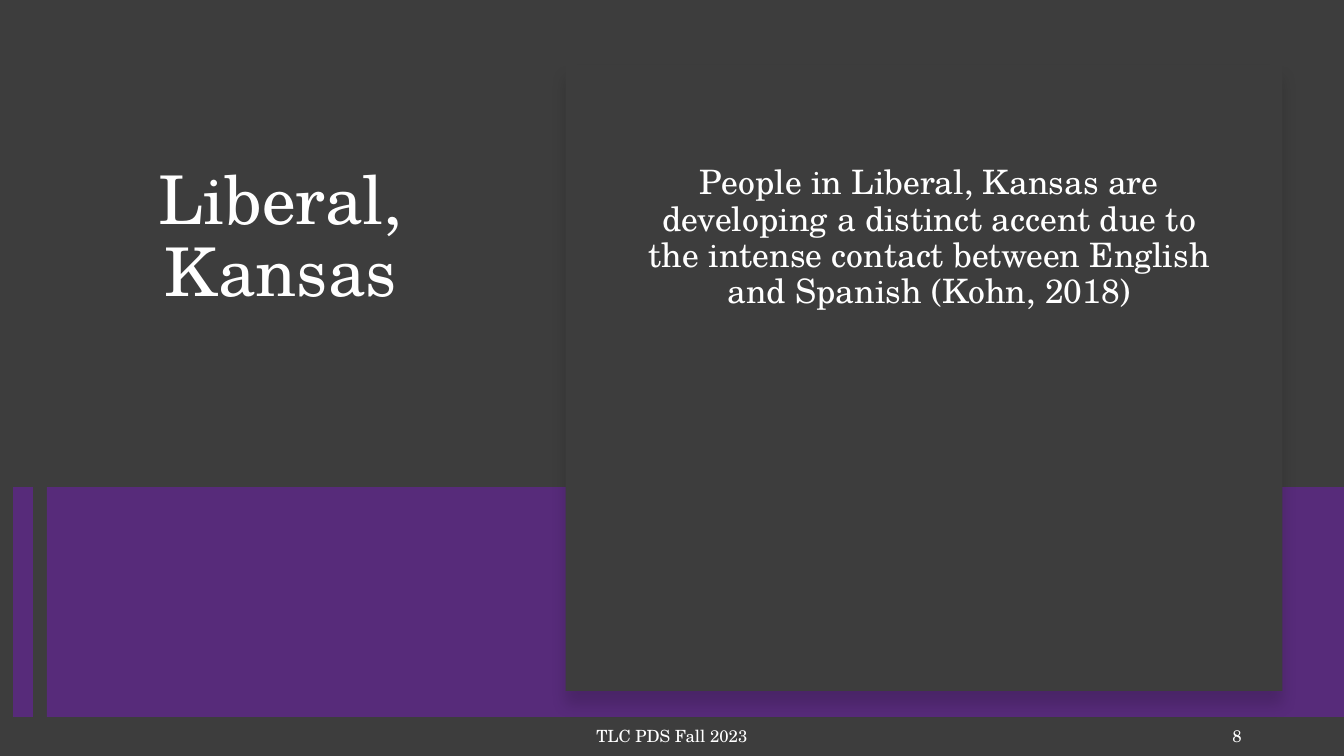
from dataclasses import dataclass

import pptx
import pptx.dml.color
import pptx.enum.shapes
import pptx.enum.text
import pptx.oxml
import pptx.oxml.ns
import pptx.shapes.autoshape
import pptx.slide
import pptx.util

Pt = pptx.util.Pt
ALIGN = pptx.enum.text.PP_ALIGN
ANCHOR = pptx.enum.text.MSO_ANCHOR

FONT = "TeX Gyre Schola"
DARK, PURPLE, WHITE = "3D3D3D", "572B7A", "FFFFFF"
SLIDE_W, SLIDE_H = 960, 540
BAND_TOP, BAND_BOTTOM = 348, 512


@dataclass
class Box:
    left: float
    top: float
    width: float
    height: float

    def lengths(self) -> list[pptx.util.Length]:
        return [Pt(v) for v in (self.left, self.top, self.width, self.height)]


@dataclass
class Label:
    text: str
    box: Box
    size: float
    align: ALIGN = ALIGN.CENTER
    anchor: ANCHOR = ANCHOR.TOP
    line_spacing: float = 1.0
    space_after: float = 0


def color(value: str) -> pptx.dml.color.RGBColor:
    return pptx.dml.color.RGBColor.from_string(value)


def add_panel(s: pptx.slide.Slide, box: Box, fill: str) -> pptx.shapes.autoshape.Shape:
    sp = s.shapes.add_shape(pptx.enum.shapes.MSO_SHAPE.RECTANGLE, *box.lengths())
    sp.shadow.inherit = False
    sp.fill.solid()
    sp.fill.fore_color.rgb = color(fill)
    sp.line.fill.background()
    return sp


def add_soft_shadow(sp: pptx.shapes.autoshape.Shape) -> None:
    effects = sp._element.spPr.find(pptx.oxml.ns.qn("a:effectLst"))
    effects.append(pptx.oxml.parse_xml(
        f'<a:outerShdw {pptx.oxml.ns.nsdecls("a")} blurRad="{Pt(11)}" dist="{Pt(10)}" '
        'dir="5400000" algn="t" rotWithShape="0">'
        '<a:srgbClr val="000000"><a:alpha val="15000"/></a:srgbClr></a:outerShdw>'))


def add_stripe(s: pptx.slide.Slide, x: float, width: float) -> None:
    line = s.shapes.add_connector(pptx.enum.shapes.MSO_CONNECTOR.STRAIGHT,
                                  Pt(x), Pt(BAND_TOP), Pt(x), Pt(BAND_BOTTOM))
    line.line.color.rgb = color(PURPLE)
    line.line.width = Pt(width)
    line._element.spPr.append(
        pptx.oxml.parse_xml(f'<a:effectLst {pptx.oxml.ns.nsdecls("a")}/>'))


def write_label(sp: pptx.shapes.autoshape.Shape, label: Label) -> None:
    """Place a text shape and fill it with the formatted label."""
    sp.left, sp.top, sp.width, sp.height = label.box.lengths()
    tf = sp.text_frame
    tf.text = label.text
    tf.word_wrap = True
    tf.auto_size = pptx.enum.text.MSO_AUTO_SIZE.NONE
    tf.vertical_anchor = label.anchor
    p = tf.paragraphs[0]
    p.alignment = label.align
    p.line_spacing = label.line_spacing
    p.space_after = Pt(label.space_after)
    r = p.runs[0]
    r.font.name = FONT
    r.font.size = Pt(label.size)
    r.font.color.rgb = color(WHITE)


TITLE = Label("Liberal, Kansas", Box(51, 115, 299, 212), 48, line_spacing=0.9)
LABELS = [
    Label("People in Liberal, Kansas are developing a distinct accent due to "
          "the intense contact between English and Spanish (Kohn, 2018)",
          Box(445.5, 115, 436.5, 338.5), 24, line_spacing=0.9),
    Label("TLC PDS Fall 2023", Box(318, 511.2, 324, 28.8), 12,
          anchor=ANCHOR.MIDDLE, space_after=6),
    Label("8", Box(678, 511.2, 216, 28.8), 12, ALIGN.RIGHT, ANCHOR.MIDDLE, space_after=6),
]


def main() -> None:
    prs = pptx.Presentation()
    prs.slide_width, prs.slide_height = Pt(SLIDE_W), Pt(SLIDE_H)
    s = prs.slides.add_slide(prs.slide_layouts[5])
    s.background.fill.solid()
    s.background.fill.fore_color.rgb = color(DARK)

    write_label(s.shapes.title, TITLE)
    band_left = 33.5
    add_panel(s, Box(band_left, BAND_TOP, SLIDE_W - band_left, BAND_BOTTOM - BAND_TOP), PURPLE)
    add_stripe(s, 16.6, 14)
    add_soft_shadow(add_panel(s, Box(404, 46, 512, 447.5), DARK))
    for label in LABELS:
        write_label(s.shapes.add_textbox(*label.box.lengths()), label)

    prs.save("out.pptx")


if __name__ == "__main__":
    main()
